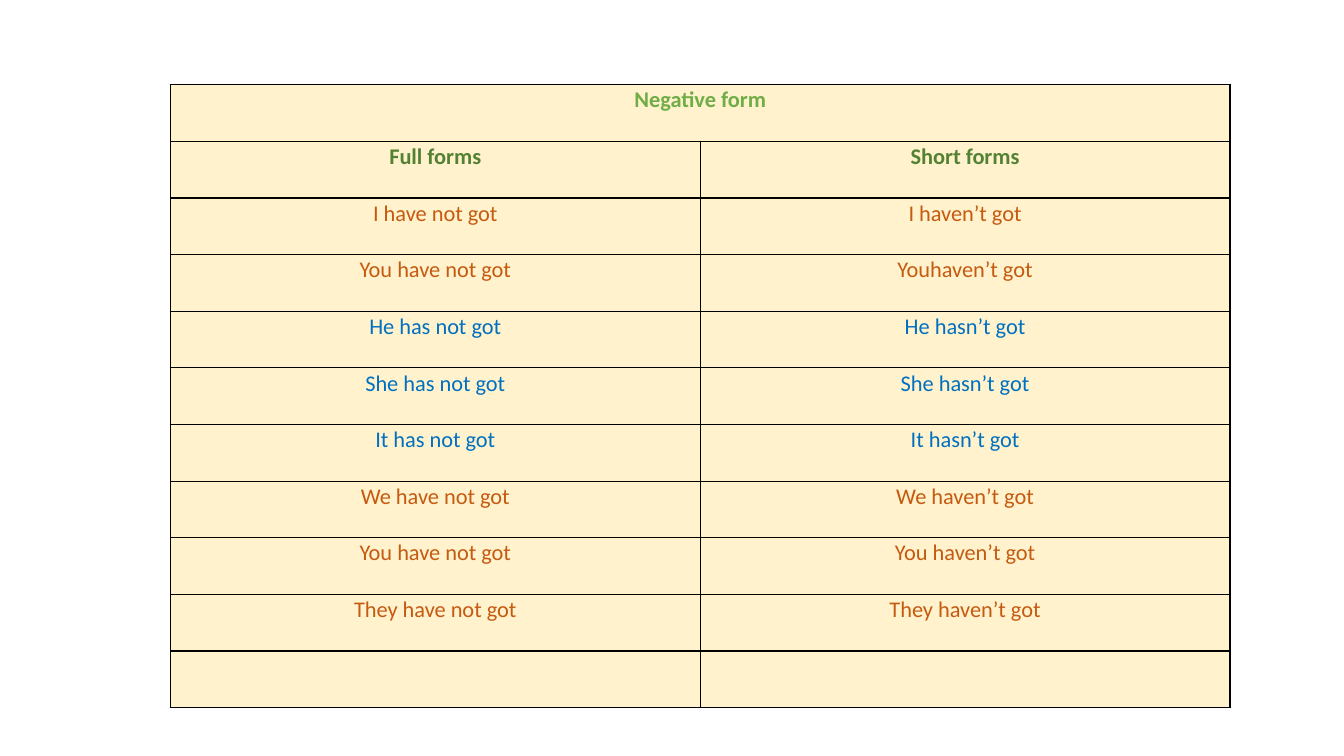
from lxml import etree
from pptx import Presentation
from pptx import util as u
from pptx.dml.color import RGBColor
from pptx.enum import text
from pptx.oxml import ns

CREAM = RGBColor(0xFF, 0xF2, 0xCC)
LIGHT_GREEN = RGBColor(0x70, 0xAD, 0x47)
DARK_GREEN = RGBColor(0x54, 0x82, 0x35)
ORANGE = RGBColor(0xC5, 0x5A, 0x11)
BLUE = RGBColor(0x00, 0x70, 0xC0)
BLACK = RGBColor(0x00, 0x00, 0x00)

# Each row: cell texts, colour, bold
ROWS = [
    (["Negative form"], LIGHT_GREEN, True),
    (["Full forms", "Short forms"], DARK_GREEN, True),
    (["I have not got", "I haven’t got"], ORANGE, False),
    (["You have not got", "Youhaven’t got"], ORANGE, False),
    (["He has not got", "He hasn’t got"], BLUE, False),
    (["She has not got", "She hasn’t got"], BLUE, False),
    (["It has not got", "It hasn’t got"], BLUE, False),
    (["We have not got", "We haven’t got"], ORANGE, False),
    (["You have not got", "You haven’t got"], ORANGE, False),
    (["They have not got", "They haven’t got"], ORANGE, False),
    ([], ORANGE, False),
]


class GrammarPage:
    font_name = "Calibri"
    font_size = u.Pt(16)
    border_width = u.Pt(1)

    def __init__(self, deck):
        self.page = deck.slides.add_slide(deck.slide_layouts[6])

    def add_border(self, cell):
        properties = cell._tc.get_or_add_tcPr()
        for side in ("L", "R", "T", "B"):
            line = etree.SubElement(properties, ns.qn(f"a:ln{side}"), w=str(self.border_width))
            fill = etree.SubElement(line, ns.qn("a:solidFill"))
            etree.SubElement(fill, ns.qn("a:srgbClr"), val=str(BLACK))

    def add_text(self, cell, wording, colour, bold):
        para = cell.text_frame.paragraphs[0]
        para.alignment = text.PP_ALIGN.CENTER
        para.line_spacing = 1.07
        span = para.add_run()
        span.text = wording
        span.font.name = self.font_name
        span.font.size = self.font_size
        span.font.bold = bold
        span.font.color.rgb = colour

    def add_table(self, rows, left, top, width, height):
        table = self.page.shapes.add_table(len(rows), 2, left, top, width, height).table
        table.first_row = table.horz_banding = False
        for cell in table.iter_cells():
            cell.margin_left = cell.margin_right = u.Inches(0.07)
            cell.margin_top = cell.margin_bottom = 0
            self.add_border(cell)
            cell.fill.solid()
            cell.fill.fore_color.rgb = CREAM
        table.cell(0, 0).merge(table.cell(0, 1))
        for row, (wordings, colour, bold) in enumerate(rows):
            for column, wording in enumerate(wordings):
                self.add_text(table.cell(row, column), wording, colour, bold)


def main():
    deck = Presentation()
    deck.slide_width, deck.slide_height = u.Inches(13.33), u.Inches(7.5)
    GrammarPage(deck).add_table(
        ROWS, u.Inches(1.69), u.Inches(0.84), u.Inches(10.51), u.Inches(6.18))
    deck.save("out.pptx")


if __name__ == "__main__":
    main()
